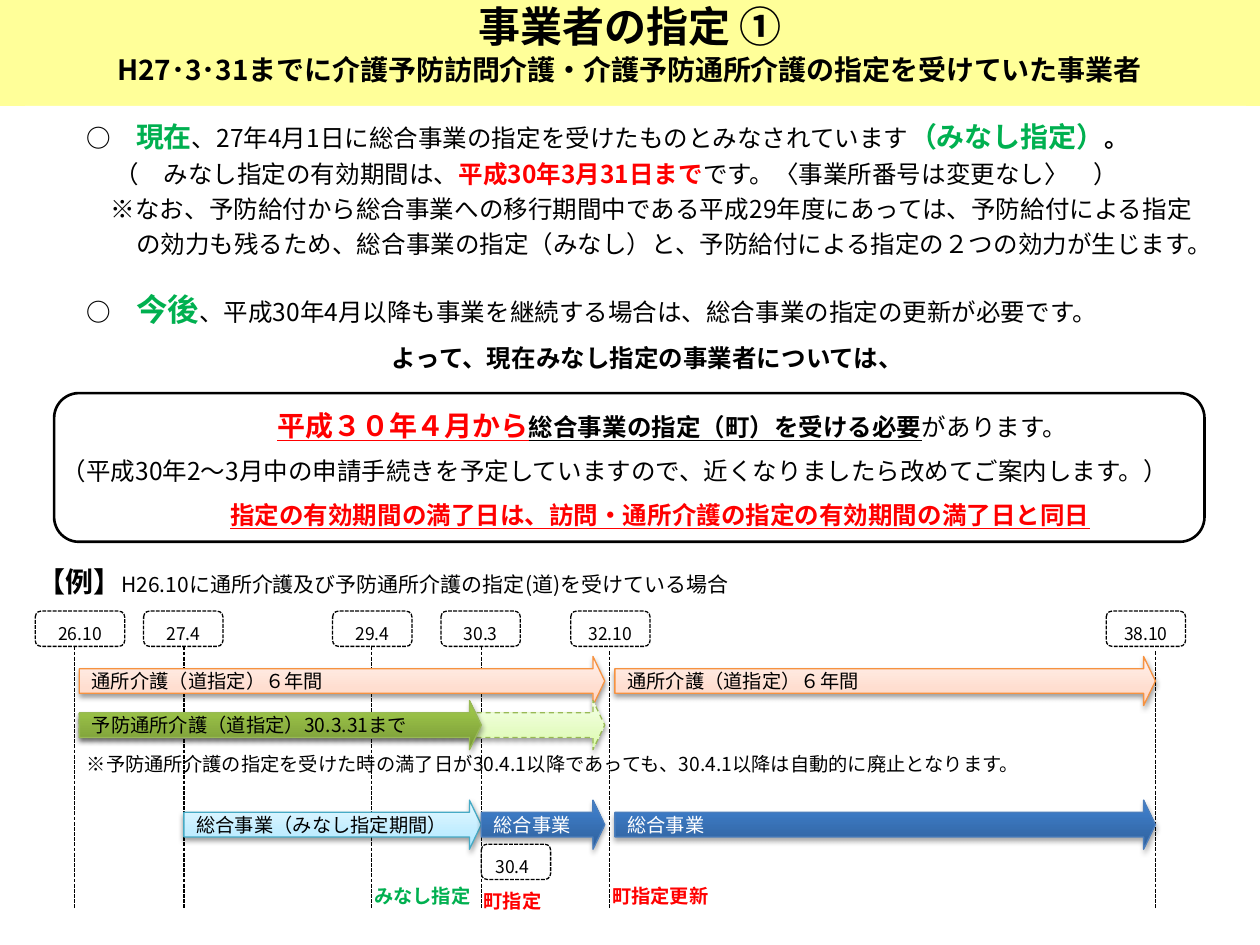
from copy import deepcopy
from pptx import Presentation
from pptx.dml.color import RGBColor
from pptx.enum.dml import MSO_LINE
from pptx.enum.shapes import MSO_CONNECTOR, MSO_SHAPE
from pptx.enum.text import MSO_ANCHOR, MSO_AUTO_SIZE, PP_ALIGN
from pptx.oxml import parse_xml
from pptx.oxml.ns import qn
from pptx.util import Inches, Pt

NS = 'xmlns:a="http://schemas.openxmlformats.org/drawingml/2006/main"'
THEME = {
    "font": "Noto Sans CJK JP",
    "black": "000000", "white": "FFFFFF", "red": "FF0000",
    "green": "00B050", "band": "FFFF99",
    "title": 24, "big": 18, "head": 16, "text": 14, "note": 12, "bar": 11, "date": 10,
    # bar styles: gradient stops, line colour, text colour, shadow alpha, shadow distance
    "peach": ([(0, "FFD2BD"), (.35, "FFDED0"), (1, "FFF2ED")], "F69240", "black", 38, 1.6),
    "pale": ([(0, "DAFDA7"), (.35, "E4FCC2"), (1, "F5FFE7")], "98B955", "black", 38, 1.6),
    "leaf": ([(0, "779737"), (.8, "9BC348"), (1, "9DC746")], "98B955", "black", 35, 1.8),
    "sky": ([(0, "A7E6FF"), (.35, "C1EDFF"), (1, "E7F8FF")], "46AAC5", "black", 38, 1.6),
    "blue": ([(0, "2F5F99"), (.8, "3D7CC7"), (1, "3A7CCB")], "4B7EBC", "white", 35, 1.8),
}
LEFT, MID = PP_ALIGN.LEFT, PP_ALIGN.CENTER

deck = Presentation()
deck.slide_width, deck.slide_height = Inches(10), Inches(7.5)
COL, ROW = deck.slide_width / 100, deck.slide_height / 75
slide = deck.slides.add_slide(deck.slide_layouts[1])
shapes = slide.shapes


def write(para, runs, align=LEFT, lead=None, left=0, hang=0, before=0):
    """Fill a paragraph with runs of (text, size, colour, style letters b and u)."""
    props = para._p.get_or_add_pPr()
    props.set("marL", str(int(left * COL)))
    props.set("indent", str(int(-hang * COL)))
    props.append(parse_xml(f"<a:buNone {NS}/>"))
    para.alignment = align
    para.space_before = Pt(before)
    if lead:
        para.line_spacing = Pt(lead)
    for text, size, tone, style in runs:
        run = para.add_run()
        run.text = text
        font = run.font
        font.size = Pt(THEME[size])
        font.color.rgb = RGBColor.from_string(THEME[tone])
        font.bold, font.underline = "b" in style, "u" in style
        font.name = THEME["font"]
        run._r.rPr.append(parse_xml(f'<a:ea {NS} typeface="{THEME["font"]}"/>'))


def block(kind, x, y, wide, high, fill=None, line=None, weight=.75, dash=None):
    """Add a shape at a grid place, with no shadow and only the given fill and line."""
    shape = shapes.add_shape(kind, *(int(n) for n in (x * COL, y * ROW, wide * COL, high * ROW)))
    shape.shadow.inherit = False
    shape.fill.background()
    shape.line.fill.background()
    if fill:
        shape.fill.solid()
        shape.fill.fore_color.rgb = RGBColor.from_string(fill)
    if line:
        shape.line.color.rgb = RGBColor.from_string(line)
        shape.line.width = Pt(weight)
        shape.line.dash_style = dash
    shape.text_frame.word_wrap = True
    shape.text_frame.vertical_anchor = MSO_ANCHOR.MIDDLE
    return shape


# Title and body
heads = [
    ([("事業者の指定 ①", "title", "black", "b")], MID, 20),
    ([("H27･3･31までに介護予防訪問介護・介護予防通所介護の指定を受けていた事業者",
       "head", "black", "b")], MID, 20),
]
points = [
    ([("○　", "text", "black", "b"), ("現在", "head", "green", "b"),
      ("、27年4月1日に総合事業の指定を受けたものとみなされています", "text", "black", ""),
      ("（みなし指定）", "head", "green", "b"), ("。", "text", "black", "b")],
     LEFT, 20, 7.8, 3.9),
    ([("（　みなし指定の有効期間は、", "text", "black", ""),
      ("平成30年3月31日まで", "text", "red", "b"),
      ("です。〈事業所番号は変更なし〉　）", "text", "black", "")], LEFT, 20, 6.1),
    ([("※なお、予防給付から総合事業への移行期間中である平成29年度にあっては、予防給付による指定",
       "text", "black", "")], LEFT, 20, 5.8),
    ([("の効力も残るため、総合事業の指定（みなし）と、予防給付による指定の２つの効力が生じます。",
       "text", "black", "")], LEFT, 20, 7.8),
    ([("○　", "text", "black", "b"), ("今後", "big", "green", "b"),
      ("、平成30年4月以降も事業を継続する場合は、総合事業の指定の更新が必要です。",
       "text", "black", "")], LEFT, 25, 7.8, 3.9, 15),
    ([("よって、現在みなし指定の事業者については、", "text", "black", "b")], MID, 25, 1.9),
    ([("平成３０年４月から", "head", "red", "bu"),
      ("総合事業の指定（町）を受ける必要", "text", "black", "bu"),
      ("があります。", "text", "black", "")], MID, 25, 5.8, 0, 15),
    ([("（平成30年2～3月中の申請手続きを予定していますので、近くなりましたら改めてご案内します。）",
       "text", "black", "")], LEFT, 25, 1.9),
    ([("指定の有効期間の満了日は、訪問・通所介護の指定の有効期間の満了日と同日",
       "text", "red", "bu")], MID, 25, 3.9),
]
for holder, place, tone, paras in (
    (shapes.title, (0, -.3, 100, 8.7), "band", heads),
    (slide.placeholders[1], (2, 8.4, 96.9, 34.6), "white", points),
):
    x, y, wide, high = place
    holder.left, holder.top = int(x * COL), int(y * ROW)
    holder.width, holder.height = int(wide * COL), int(high * ROW)
    holder.fill.solid()
    holder.fill.fore_color.rgb = RGBColor.from_string(THEME[tone])
    frame = holder.text_frame
    frame.auto_size, frame.word_wrap = MSO_AUTO_SIZE.NONE, True
    frame.vertical_anchor = MSO_ANCHOR.MIDDLE
    for i, para in enumerate(paras):
        write(frame.add_paragraph() if i else frame.paragraphs[0], *para)
block(MSO_SHAPE.ROUNDED_RECTANGLE, 4.3, 31.2, 91.3, 11.8, line=THEME["black"], weight=1.5)

# Time axis: date, line column, line top, box left, box width
dates = [
    ("26.10", 5.9, 51.3, 2.8, 7.1), ("27.4", 14.6, 51.3, 11.4, 6.3),
    ("29.4", 29.5, 51.3, 26.4, 6.3), ("30.3", 38.2, 51.3, 35, 6.3),
    ("32.10", 48.4, 51.7, 45.3, 6.3), ("38.10", 91.7, 51.7, 87.8, 6.3),
]
for _, x, top, *_ in dates:
    rule = shapes.add_connector(MSO_CONNECTOR.STRAIGHT, int(x * COL), int(top * ROW),
                                int(x * COL), int(72.1 * ROW))
    rule.line.color.rgb = RGBColor.from_string(THEME["black"])
    rule.line.width = Pt(.75)
    rule.line.dash_style = MSO_LINE.SQUARE_DOT
    rule._element.spPr.append(parse_xml(f"<a:effectLst {NS}/>"))

# Bars: left, top, width, style, text
bars = [
    (6.3, 52.1, 41.7, "peach", "通所介護（道指定）６年間"),
    (48.8, 52.1, 42.9, "peach", "通所介護（道指定）６年間"),
    (6.3, 55.6, 41.7, "pale", ""),
    (6.3, 55.6, 31.9, "leaf", "予防通所介護（道指定）30.3.31まで"),
    (14.6, 63.5, 23.6, "sky", "総合事業（みなし指定期間）"),
    (38.2, 63.5, 9.8, "blue", "総合事業"),
    (48.8, 63.5, 42.9, "blue", "総合事業"),
]
for x, y, wide, style, text in bars:
    stops, edge, tone, alpha, drop = THEME[style]
    bar = block(MSO_SHAPE.RIGHT_ARROW, x, y, wide, 3.9, line=edge,
                dash=MSO_LINE.DASH if style == "pale" else None)
    bar.adjustments[1] = .24
    bar.fill.gradient()
    bar.fill.gradient_angle = 90
    first = bar.fill.gradient_stops[0]._gs
    first.addnext(deepcopy(first))
    for stop, (spot, shade) in zip(bar.fill.gradient_stops, stops):
        stop.position = spot
        stop.color.rgb = RGBColor.from_string(shade)
    bar._element.spPr.find(qn("a:effectLst")).append(parse_xml(
        f'<a:outerShdw {NS} blurRad="{Pt(3.1)}" dist="{Pt(drop)}" dir="5400000" rotWithShape="0">'
        f'<a:srgbClr val="000000"><a:alpha val="{alpha * 1000}"/></a:srgbClr></a:outerShdw>'))
    if text:
        write(bar.text_frame.paragraphs[0], [(text, "bar", tone, "")])

# Date boxes
tags = [(text, left, 48.5, wide, MID) for text, _, _, left, wide in dates]
tags.append(("30.4", 38.2, 67, 5.5, LEFT))
for text, x, y, wide, align in tags:
    tag = block(MSO_SHAPE.ROUNDED_RECTANGLE, x, y, wide, 2.8, THEME["white"],
                THEME["black"], dash=MSO_LINE.SQUARE_DOT)
    write(tag.text_frame.paragraphs[0], [(text, "date", "black", "")], align, 17)

# Labels without a frame
labels = [
    (28.7, 69.4, 10.5, 2.8, [("みなし指定", "bar", "green", "b")]),
    (37.4, 69.8, 7.9, 2.8, [("町指定", "bar", "red", "b")]),
    (47.6, 69.4, 10.2, 2.8, [("町指定更新", "bar", "red", "b")]),
    (2, 45.2, 93.7, 2.2, [
        ("【例】", "head", "black", "b"),
        ("H26.10に通所介護及び予防通所介護の指定(道)を受けている場合", "note", "black", "")]),
    (5.9, 58.8, 85.8, 3.1, [
        ("※予防通所介護の指定を受けた時の満了日が30.4.1以降であっても、30.4.1以降は自動的に廃止となります。",
         "bar", "black", "")]),
]
for x, y, wide, high, runs in labels:
    label = block(MSO_SHAPE.RECTANGLE, x, y, wide, high)
    write(label.text_frame.paragraphs[0], runs, lead=17)

deck.save("out.pptx")
